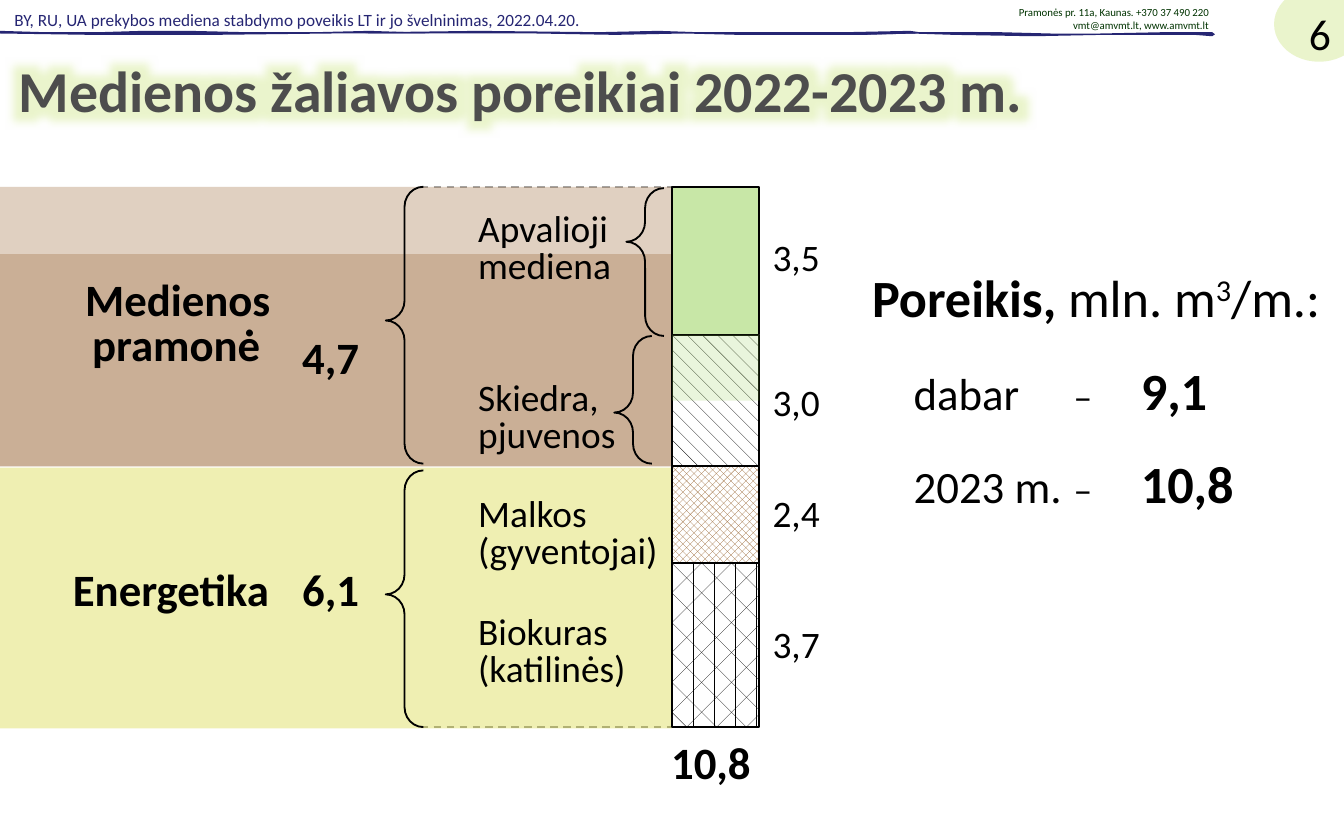
import lxml.etree
import pptx
import pptx.dml.color
import pptx.enum.dml
import pptx.enum.shapes
import pptx.enum.text
import pptx.oxml.ns
import pptx.util

Inches = pptx.util.Inches
Pt = pptx.util.Pt
KIND = pptx.enum.shapes.MSO_SHAPE
HATCH = pptx.enum.dml.MSO_PATTERN
ALIGN = pptx.enum.text.PP_ALIGN
ANCHOR = pptx.enum.text.MSO_ANCHOR

COLORS = {
    "black": "000000", "white": "FFFFFF", "navy": "262673", "title": "4D4D4D",
    "forest": "003300", "lime": "99CC00", "leaf": "92D050", "brown": "996633",
    "olive": "CCCC00", "dash": "A6A6A6",
}

BAR, WIDE = 5, 0.65
TOP, BASE = 1.39, 5.41

STROKES = [
    [(6.36, 0.25), (6.59, 0.24), (7.45, 0.24), (7.83, 0.25), (8.17, 0.25),
     (8.64, 0.24), (9.02, 0.24), (9.04, 0.255), (9.02, 0.27), (8.89, 0.26),
     (8.2, 0.26), (7.69, 0.27), (7.1, 0.26), (6.79, 0.25), (6.36, 0.26)],
    [(6.84, 0.24), (6.81, 0.25), (6.42, 0.26), (5.5, 0.26), (5.09, 0.25),
     (4.58, 0.26), (3.99, 0.25), (2.72, 0.25), (2.82, 0.24), (3.56, 0.23),
     (4.45, 0.24), (4.9, 0.23), (5.19, 0.24), (6.29, 0.24), (6.77, 0.23)],
    [(0, 0.23), (0.33, 0.24), (0.74, 0.24), (1.06, 0.23), (1.41, 0.23),
     (1.83, 0.24), (2.35, 0.24), (2.75, 0.23), (3.04, 0.24), (3.19, 0.25),
     (2.47, 0.25), (1.58, 0.26), (0.69, 0.26), (0, 0.25)],
]


def tint(name):
    return pptx.dml.color.RGBColor.from_string(COLORS[name])


def add(parent, tag, **attrs):
    return lxml.etree.SubElement(parent, pptx.oxml.ns.qn(tag), attrs)


def shade(node, share):
    add(node, "a:alpha", val=str(share * 1000))


def paint(shape, fill=None, alpha=None, hatch=None, line=None):
    shape.shadow.inherit = False
    if hatch:
        shape.fill.patterned()
        shape.fill.pattern = hatch
        shape.fill.fore_color.rgb = tint(fill)
        shape.fill.back_color.rgb = tint("white")
    elif fill:
        shape.fill.solid()
        shape.fill.fore_color.rgb = tint(fill)
        if alpha:
            shade(shape._element.spPr.find(".//" + pptx.oxml.ns.qn("a:srgbClr")), alpha)
    else:
        shape.fill.background()
    if line:
        shape.line.color.rgb = tint(line)
        shape.line.width = Pt(1)
    else:
        shape.line.fill.background()


def block(slide, at, kind=KIND.RECTANGLE, **style):
    shape = slide.shapes.add_shape(kind, *map(Inches, at))
    paint(shape, **style)
    return shape


def brace(slide, at, tip):
    shape = block(slide, at, KIND.LEFT_BRACE, line="black")
    shape.adjustments[0] = 0.529
    shape.adjustments[1] = tip


def stroke(slide, points):
    pairs = [(Inches(x), Inches(y)) for x, y in points]
    maker = slide.shapes.build_freeform(*pairs[0])
    maker.add_line_segments(pairs[1:], close=True)
    paint(maker.convert_to_shape(), fill="navy")


def dash(slide, x1, y1, x2, y2):
    line = slide.shapes.add_connector(
        pptx.enum.shapes.MSO_CONNECTOR.STRAIGHT, *map(Inches, (x1, y1, x2, y2)))
    line.line.color.rgb = tint("dash")
    line.line.width = Pt(1)
    line.line.dash_style = pptx.enum.dml.MSO_LINE.DASH
    add(line._element.spPr, "a:effectLst")


def style(run, size, color, bold, base=0):
    run.font.name = "Calibri"
    run.font.size = Pt(size)
    run.font.bold = bold
    run.font.color.rgb = tint(color)
    if base:
        run._r.get_or_add_rPr().set("baseline", str(base * 1000))


def write(slide, text, at, size=20, color="black", bold=False, align=ALIGN.LEFT,
          anchor=ANCHOR.TOP, space=Pt(20)):
    frame = slide.shapes.add_textbox(*map(Inches, at)).text_frame
    frame.word_wrap = True
    frame.vertical_anchor = anchor
    for i, words in enumerate(text.split("\n")):
        para = frame.paragraphs[0] if i == 0 else frame.add_paragraph()
        para.alignment = align
        para.line_spacing = space
        run = para.add_run()
        run.text = words
        style(run, size, color, bold)
    return frame


def glow(frame, color, size, alpha):
    props = frame.paragraphs[0].runs[0]._r.get_or_add_rPr()
    effect = lxml.etree.Element(pptx.oxml.ns.qn("a:effectLst"))
    halo = add(effect, "a:glow", rad=str(Inches(size)))
    shade(add(halo, "a:srgbClr", val=COLORS[color]), alpha)
    props.find(pptx.oxml.ns.qn("a:solidFill")).addnext(effect)


def header(slide):
    block(slide, (9.48, -0.1, 0.67, 0.56), KIND.OVAL, fill="lime", alpha=20)
    write(slide, "BY, RU, UA prekybos mediena stabdymo poveikis LT ir jo švelninimas, 2022.04.20.",
          (0.01, 0.02, 8.13, 0.26), size=9.2, color="navy", space=1.0)
    for points in STROKES:
        stroke(slide, points)
    write(slide, "Pramonės pr. 11a, Kaunas. +370 37 490 220\nvmt@amvmt.lt, www.amvmt.lt",
          (7.1, -0.01, 1.99, 0.3), size=5.8, color="forest", align=ALIGN.RIGHT, space=1.0)
    write(slide, "6", (9.33, 0, 0.67, 0.33), size=23.3, align=ALIGN.RIGHT, space=1.0)
    title = write(slide, "Medienos žaliavos poreikiai 2022-2023 m.", (0.04, 0.31, 9.92, 0.8),
                  size=31, color="title", bold=True, anchor=ANCHOR.MIDDLE, space=0.8)
    glow(title, "lime", 0.35, 20)


def bands(slide):
    for x in (BAR, BAR + WIDE):
        dash(slide, x, TOP, x, 1.94)
    for y in (BASE, TOP):
        dash(slide, 3.13, y, BAR + WIDE, y)
    for top, high, fill in ((1.89, 1.58, "brown"), (TOP, 2.08, "brown"), (3.48, 1.94, "olive")):
        block(slide, (0, top, BAR, high), fill=fill, alpha=30)


def stack(slide):
    for top, high, look in (
        (4.19, 1.22, dict(fill="black", hatch=HATCH.DIVOT)),
        (3.47, 0.72, dict(fill="brown", hatch=HATCH.LARGE_CHECKER_BOARD)),
        (TOP, 1.1, dict(fill="leaf", alpha=50)),
        (2.49, 0.98, dict(fill="black", hatch=HATCH.SHINGLE)),
    ):
        block(slide, (BAR, top, WIDE, high), line="black", **look)
    block(slide, (BAR, 2.49, WIDE, 0.49), fill="leaf", alpha=20)
    for name, top, value, level in (
        ("Apvalioji\nmediena", 1.53, "3,5", 1.75),
        ("Skiedra,\npjuvenos", 2.79, "3,0", 2.83),
        ("Malkos\n(gyventojai)", 3.65, "2,4", 3.65),
        ("Biokuras\n(katilinės)", 4.53, "3,7", 4.63),
    ):
        write(slide, name, (3.46, top, 1.54, 0.67))
        write(slide, value, (BAR + WIDE, level, 0.69, 0.39))
    write(slide, "10,8", (4.74, 5.54, 1.1, 0.4), size=24, bold=True, align=ALIGN.CENTER)


def groups(slide):
    for left, top, high, tip in ((4.66, 1.4, 1.1, 0.363), (4.57, 2.5, 0.95, 0.6),
                                 (2.87, TOP, 2.06, 0.483), (2.87, 3.5, 1.91, 0.483)):
        brace(slide, (left, top, 0.28, high), tip)
    for text, at, space in (
        ("Medienos pramonė ", (-0.01, 2.04, 2.12, 0.78), 24),
        ("Energetika", (0.25, 4.25, 1.85, 0.4), 20),
        ("4,7", (2.14, 2.53, 0.63, 0.4), 20),
        ("6,1", (2.14, 4.25, 0.63, 0.4), 20),
    ):
        write(slide, text, at, size=24, bold=True, align=ALIGN.RIGHT, space=Pt(space))


def needs(slide):
    frame = write(slide, "Poreikis, ", (6.39, 1.89, 3.61, 2.06), size=28, bold=True, space=1.07)
    head = frame.paragraphs[0]
    for text, base in (("mln. m", 0), ("3", 30), ("/m.:", 0)):
        run = head.add_run()
        run.text = text
        style(run, 28, "black", False, base)
    for when, value, stop in (("dabar", "9,1", 2.09), ("2023 m.", "10,8", 1.96)):
        para = frame.add_paragraph()
        props = para._p.get_or_add_pPr()
        props.set("marL", "0")
        props.set("indent", str(Inches(0.31)))
        tabs = add(props, "a:tabLst")
        for place in (1.67, stop):
            add(tabs, "a:tab", pos=str(Inches(place)), algn="l")
        para.line_spacing = 1.07
        para.space_before = Pt(14)
        for text, size, bold in ((when, 24, False), ("\t–\t", 20, False), (value, 28, True)):
            run = para.add_run()
            run.text = text
            style(run, size, "black", bold)


def main():
    deck = pptx.Presentation()
    deck.slide_width, deck.slide_height = Inches(10), Inches(6.25)
    slide = deck.slides.add_slide(deck.slide_layouts[6])
    header(slide)
    bands(slide)
    stack(slide)
    groups(slide)
    needs(slide)
    deck.save("out.pptx")


if __name__ == "__main__":
    main()
